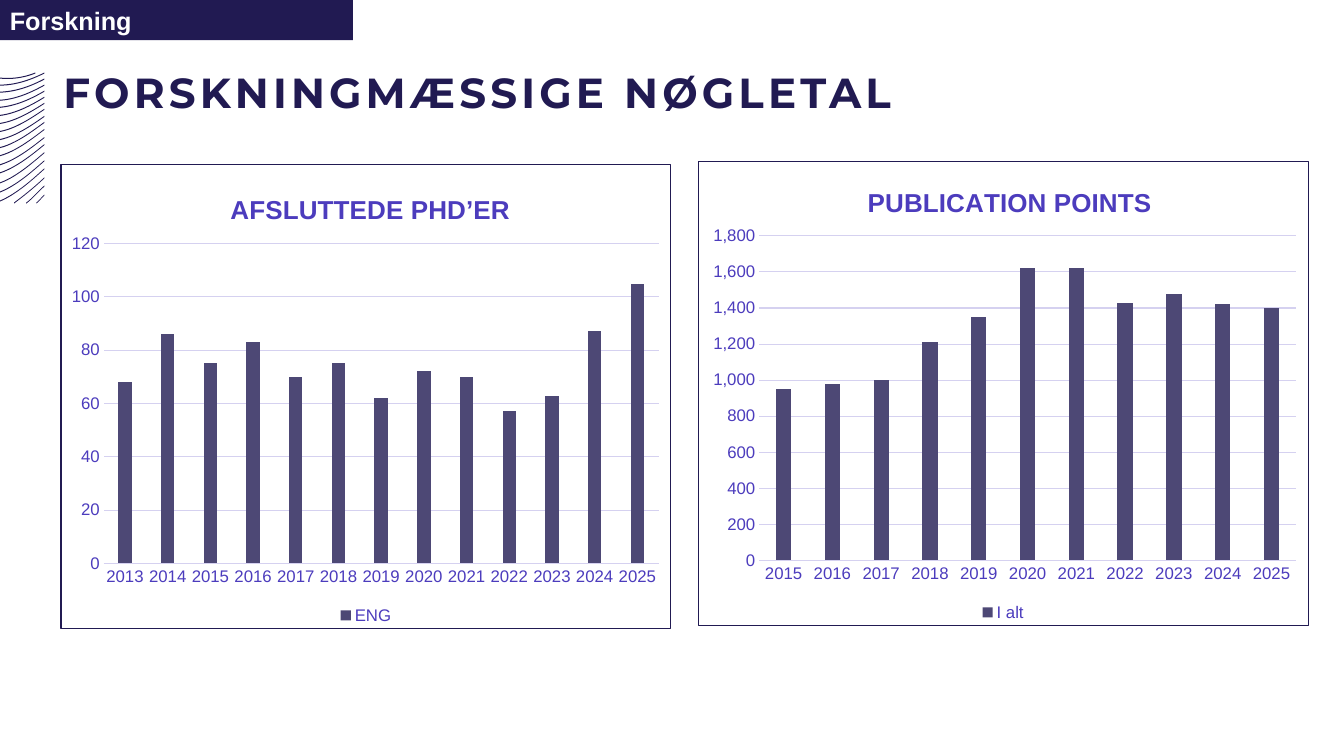
"""Build the slide of key research figures with two column charts."""
from dataclasses import dataclass

import pptx
import pptx.chart.data
import pptx.dml.color
import pptx.enum.chart
import pptx.enum.shapes
import pptx.enum.text
import pptx.oxml
import pptx.oxml.ns
import pptx.util

PX = 9144
EDGE = 44
FLOOR = 201


@dataclass(frozen=True)
class Theme:
    navy: str = "211A52"
    white: str = "FFFFFF"
    violet: str = "4C3CBD"
    grid: str = "D5D1F0"
    bar: str = "4D4875"
    body: str = "Arial"
    head: str = "Montserrat"
    title: float = 30
    tag: float = 18
    name: float = 18.6
    label: float = 12
    line: float = 0.75


THEME = Theme()


def emu(*sizes):
    return [pptx.util.Emu(round(size * PX)) for size in sizes]


def rgb(code):
    return pptx.dml.color.RGBColor.from_string(code)


def style(font, size, color, face=THEME.body, bold=False):
    font.size = pptx.util.Pt(size)
    font.name = face
    font.bold = bold
    font.color.rgb = rgb(color)


def fill(shape, color):
    shape.shadow.inherit = False
    shape.fill.solid()
    shape.fill.fore_color.rgb = rgb(color)
    shape.line.fill.background()


def curve(a, b, c, d, t):
    s = 1 - t
    return a * s**3 + 3 * b * s * s * t + 3 * c * s * t * t + d * t**3


def wave(group, start, end, slopes):
    """Draw one thin band that bends from its left start to its right end."""
    (x1, y1), (x2, y2) = start, end
    third = (x2 - x1) / 3
    ends = y1, y1 - slopes[0] * third, y2 + slopes[1] * third, y2
    top = [(x1 + (x2 - x1) * i / 12, curve(*ends, i / 12)) for i in range(13)]
    low = [(x, y + 1) for x, y in reversed(top)]
    dots = [emu(x, y) for x, y in top + low]
    form = group.shapes.build_freeform(*dots[0], scale=1.0)
    form.add_line_segments(dots[1:], close=True)
    fill(form.convert_to_shape(), THEME.navy)


def waves(slide):
    group = slide.shapes.add_group_shape()
    left = [84, 91, 99, 106, 114, 122, 130, 138, 146, 154, 163, 171, 181, 190, 199]
    right = [72, 78, 84, 90, 96, 102, 108, 115, 121, 128, 136, 143, 151, 159, 167]
    wave(group, (0, 77), (35, 72), (-0.1, 0.4))
    for i, (low, high) in enumerate(zip(left, right)):
        wave(group, (0, low), (EDGE, high), (0.03 * i, 0.5 + 0.03 * i))
    for x, high in [(14, 176), (26, 184), (36, 193)]:
        wave(group, (x, FLOOR), (EDGE, high), (0.75, 0.95))


def banner(slide, text):
    shape = slide.shapes.add_shape(
        pptx.enum.shapes.MSO_SHAPE.RECTANGLE, *emu(0, 0, 350, 40))
    fill(shape, THEME.navy)
    frame = shape.text_frame
    frame.vertical_anchor = pptx.enum.text.MSO_ANCHOR.MIDDLE
    line = frame.paragraphs[0]
    line.text = text
    line.alignment = pptx.enum.text.PP_ALIGN.LEFT
    style(line.font, THEME.tag, THEME.white, bold=True)


def title(slide, text):
    frame = slide.shapes.add_textbox(*emu(63, 44, 1067, 86)).text_frame
    frame.word_wrap = True
    frame.margin_left = frame.margin_right = frame.margin_bottom = 0
    frame.margin_top = emu(22)[0]
    line = frame.paragraphs[0]
    line.text = text
    style(line.font, THEME.title, THEME.navy, THEME.head, True)
    line._p.get_or_add_pPr().get_or_add_defRPr().set("spc", "300")


def place(node, tag, spots):
    """Give a chart part a fixed place, in shares of the chart."""
    inner = '<c:layoutTarget val="inner"/>' if len(spots) == 4 else ""
    modes = "".join(f'<c:{k}Mode val="edge"/>' for k in "xy")
    sizes = "".join(f'<c:{k} val="{v}"/>' for k, v in zip("xywh", spots))
    for old in node.findall(pptx.oxml.ns.qn("c:layout")):
        node.remove(old)
    layout = pptx.oxml.parse_xml(
        f'<c:layout {pptx.oxml.ns.nsdecls("c")}><c:manualLayout>'
        f"{inner}{modes}{sizes}</c:manualLayout></c:layout>")
    if tag:
        node.find(pptx.oxml.ns.qn(tag)).addnext(layout)
    else:
        node.insert(0, layout)


def border(chart):
    chart._chartSpace.find(pptx.oxml.ns.qn("c:chart")).addnext(
        pptx.oxml.parse_xml(
            f'<c:spPr {pptx.oxml.ns.nsdecls("c", "a")}><a:noFill/>'
            f'<a:ln w="{pptx.util.Pt(THEME.line)}"><a:solidFill>'
            f'<a:srgbClr val="{THEME.navy}"/></a:solidFill></a:ln></c:spPr>'))


def rule(line):
    line.color.rgb = rgb(THEME.grid)
    line.width = pptx.util.Pt(THEME.line)


def axes(chart, top, step):
    for axis in (chart.category_axis, chart.value_axis):
        axis.major_tick_mark = pptx.enum.chart.XL_TICK_MARK.NONE
        style(axis.tick_labels.font, THEME.label, THEME.violet)
    rule(chart.category_axis.format.line)
    scale = chart.value_axis
    scale.format.line.fill.background()
    rule(scale.major_gridlines.format.line)
    scale.minimum_scale, scale.maximum_scale, scale.major_unit = 0, top, step
    scale.tick_labels.number_format = "#,##0"
    scale.tick_labels.number_format_is_linked = False


def columns(slide, box, name, label, first, values, limits, head, plot):
    data = pptx.chart.data.CategoryChartData()
    data.categories = [str(first + i) for i in range(len(values))]
    data.add_series(label, values)
    chart = slide.shapes.add_chart(
        pptx.enum.chart.XL_CHART_TYPE.COLUMN_CLUSTERED, *emu(*box), data).chart
    style(chart.font, 10, THEME.navy)
    border(chart)
    line = chart.chart_title.text_frame.paragraphs[0]
    line.text = name
    style(line.font, THEME.name, THEME.violet, bold=True)
    place(chart.chart_title._element, "c:tx", head)
    place(chart._chartSpace.chart.plotArea, None, plot)
    chart.has_legend = True
    chart.legend.position = pptx.enum.chart.XL_LEGEND_POSITION.BOTTOM
    chart.legend.include_in_layout = False
    style(chart.legend.font, THEME.label, THEME.violet)
    axes(chart, *limits)
    bars = chart.plots[0]
    bars.gap_width, bars.overlap, bars.vary_by_categories = 219, -27, False
    paint = bars.series[0].format.fill
    paint.solid()
    paint.fore_color.rgb = rgb(THEME.bar)


def main():
    deck = pptx.Presentation()
    deck.slide_width, deck.slide_height = emu(1333, 750)
    slide = deck.slides.add_slide(deck.slide_layouts[6])
    waves(slide)
    title(slide, "FORSKNINGMÆSSIGE NØGLETAL")
    banner(slide, "Forskning")
    columns(slide, (60, 163, 606, 461), "AFSLUTTEDE PHD’ER", "ENG", 2013,
            [68, 86, 75, 83, 70, 75, 62, 72, 70, 57, 63, 87, 105],
            (120, 20), (0.27, 0.05), (0.07, 0.17, 0.91, 0.69))
    columns(slide, (692, 160, 606, 461), "PUBLICATION POINTS", "I alt", 2015,
            [950, 980, 1000, 1210, 1350, 1620, 1620, 1430, 1480, 1420, 1400],
            (1800, 200), (0.27, 0.04), (0.1, 0.16, 0.88, 0.7))
    deck.save("out.pptx")


if __name__ == "__main__":
    main()
